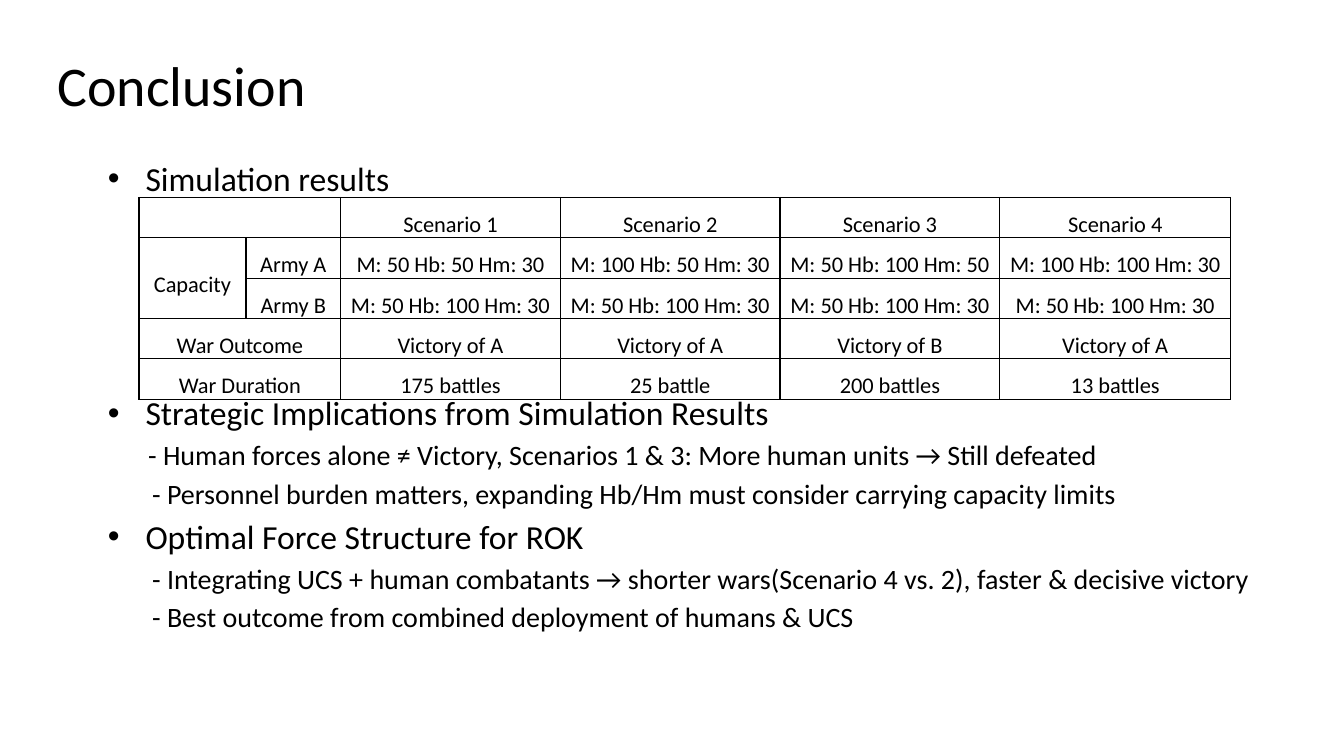
from dataclasses import dataclass

from lxml import etree
from pptx import Presentation
from pptx.dml.color import RGBColor
from pptx.enum.text import MSO_ANCHOR, MSO_AUTO_SIZE, PP_ALIGN
from pptx.oxml.ns import qn
from pptx.slide import Slide
from pptx.table import _Cell
from pptx.text.text import _Paragraph
from pptx.util import Emu, Inches, Pt

CENTER = PP_ALIGN.CENTER
MIDDLE = MSO_ANCHOR.MIDDLE
FIT_SHAPE = MSO_AUTO_SIZE.SHAPE_TO_FIT_TEXT

SLIDE_WIDTH = Inches(13.33)
SLIDE_HEIGHT = Inches(7.5)


@dataclass(frozen=True)
class Theme:
    font: str = "Calibri"
    ink: str = "000000"
    title_size: float = 40
    heading_size: float = 24
    point_size: float = 20
    table_size: float = 16
    heading_gap: float = 4.5
    point_gap: float = 3.5
    border_width: float = 1


@dataclass(frozen=True)
class Area:
    """A rectangle in percent of the slide's width and height."""
    left: float
    top: float
    width: float
    height: float

    def box(self) -> tuple[Emu, Emu, Emu, Emu]:
        return across(self.left), down(self.top), across(self.width), down(self.height)


@dataclass(frozen=True)
class Point:
    text: str
    indent: float = 3.3  # percent of the slide's width


@dataclass(frozen=True)
class Section:
    heading: str
    points: tuple[Point, ...] = ()
    gap: float = 0  # points above the heading


THEME = Theme()

# Layout
TITLE_AREA = Area(3.53, 6, 20.18, 10.27)
BODY_AREA = Area(7.28, 20.27, 89.5, 75.2)
TABLE_AREA = Area(10.35, 26.13, 81.23, 23.87)
COLUMN_SHARES = (7.95, 7.05, 16.35, 16.35, 16.35, 17.18)
BULLET_INDENT = 2.81
TABLE_GAP = 138.5  # room for the table, in points

# Content
SECTIONS = (
    Section("Simulation results"),
    Section("Strategic Implications from Simulation Results", (
        Point("- Human forces alone ≠ Victory, Scenarios 1 & 3: "
              "More human units → Still defeated", 3),
        Point("- Personnel burden matters, expanding Hb/Hm must consider "
              "carrying capacity limits"),
    ), TABLE_GAP),
    Section("Optimal Force Structure for ROK", (
        Point("- Integrating UCS + human combatants → shorter wars"
              "(Scenario 4 vs. 2), faster & decisive victory"),
        Point("- Best outcome from combined deployment of humans & UCS"),
    ), THEME.heading_gap),
)
RESULTS = (
    ("", "", "Scenario 1", "Scenario 2", "Scenario 3", "Scenario 4"),
    ("Capacity", "Army A", "M: 50 Hb: 50 Hm: 30", "M: 100 Hb: 50 Hm: 30",
     "M: 50 Hb: 100 Hm: 50", "M: 100 Hb: 100 Hm: 30"),
    ("", "Army B") + ("M: 50 Hb: 100 Hm: 30",) * 4,
    ("War Outcome", "", "Victory of A", "Victory of A", "Victory of B", "Victory of A"),
    ("War Duration", "", "175 battles", "25 battle", "200 battles", "13 battles"),
)
# First and last cell of each merged block, as (row, column)
MERGES = (((0, 0), (0, 1)), ((1, 0), (2, 0)), ((3, 0), (3, 1)), ((4, 0), (4, 1)))


def across(percent: float) -> Emu:
    return Emu(round(SLIDE_WIDTH * percent / 100))


def down(percent: float) -> Emu:
    return Emu(round(SLIDE_HEIGHT * percent / 100))


def set_font(paragraph: _Paragraph, size: float) -> None:
    paragraph.font.name = THEME.font
    paragraph.font.size = Pt(size)
    paragraph.font.color.rgb = RGBColor.from_string(THEME.ink)


def set_indent(paragraph: _Paragraph, margin: float, bullet: bool) -> None:
    properties = paragraph._p.get_or_add_pPr()
    properties.set("marL", str(across(margin)))
    properties.set("indent", str(-across(margin) if bullet else 0))
    if bullet:
        etree.SubElement(properties, qn("a:buFont"), typeface="Arial")
        etree.SubElement(properties, qn("a:buChar"), char="•")
    else:
        etree.SubElement(properties, qn("a:buNone"))


def set_borders(cell: _Cell) -> None:
    properties = cell._tc.get_or_add_tcPr()
    for side in ("lnL", "lnR", "lnT", "lnB"):
        line = etree.SubElement(properties, qn(f"a:{side}"), w=str(Pt(THEME.border_width)))
        fill = etree.SubElement(line, qn("a:solidFill"))
        etree.SubElement(fill, qn("a:srgbClr"), val=THEME.ink)


def add_title(slide: Slide, text: str) -> None:
    frame = slide.shapes.add_textbox(*TITLE_AREA.box()).text_frame
    frame.word_wrap = False
    frame.auto_size = FIT_SHAPE
    frame.text = text
    set_font(frame.paragraphs[0], THEME.title_size)


def add_body(slide: Slide, sections: tuple[Section, ...]) -> None:
    frame = slide.shapes.add_textbox(*BODY_AREA.box()).text_frame
    frame.word_wrap = True
    for number, section in enumerate(sections):
        paragraph = frame.add_paragraph() if number else frame.paragraphs[0]
        paragraph.text = section.heading
        if section.gap:
            paragraph.space_before = Pt(section.gap)
        set_indent(paragraph, BULLET_INDENT, bullet=True)
        set_font(paragraph, THEME.heading_size)
        for point in section.points:
            paragraph = frame.add_paragraph()
            paragraph.text = point.text
            paragraph.space_before = Pt(THEME.point_gap)
            set_indent(paragraph, point.indent, bullet=False)
            set_font(paragraph, THEME.point_size)


def fill_cell(cell: _Cell, text: str) -> None:
    cell.text = text
    cell.vertical_anchor = MIDDLE
    cell.margin_left = cell.margin_right = Inches(0.07)
    cell.margin_top = cell.margin_bottom = 0
    set_borders(cell)
    cell.fill.background()
    paragraph = cell.text_frame.paragraphs[0]
    paragraph.alignment = CENTER
    paragraph.line_spacing = 1.5
    set_font(paragraph, THEME.table_size)


def add_results_table(slide: Slide) -> None:
    table = slide.shapes.add_table(
        len(RESULTS), len(COLUMN_SHARES), *TABLE_AREA.box()).table
    table.first_row = table.horz_banding = False
    for column, share in zip(table.columns, COLUMN_SHARES):
        column.width = across(share)
    for row_index, texts in enumerate(RESULTS):
        for column_index, text in enumerate(texts):
            fill_cell(table.cell(row_index, column_index), text)
    for first, last in MERGES:
        table.cell(*first).merge(table.cell(*last))


def main() -> None:
    presentation = Presentation()
    presentation.slide_width = SLIDE_WIDTH
    presentation.slide_height = SLIDE_HEIGHT
    slide = presentation.slides.add_slide(presentation.slide_layouts[6])
    add_title(slide, "Conclusion")
    add_body(slide, SECTIONS)
    add_results_table(slide)
    presentation.save("out.pptx")


if __name__ == "__main__":
    main()
